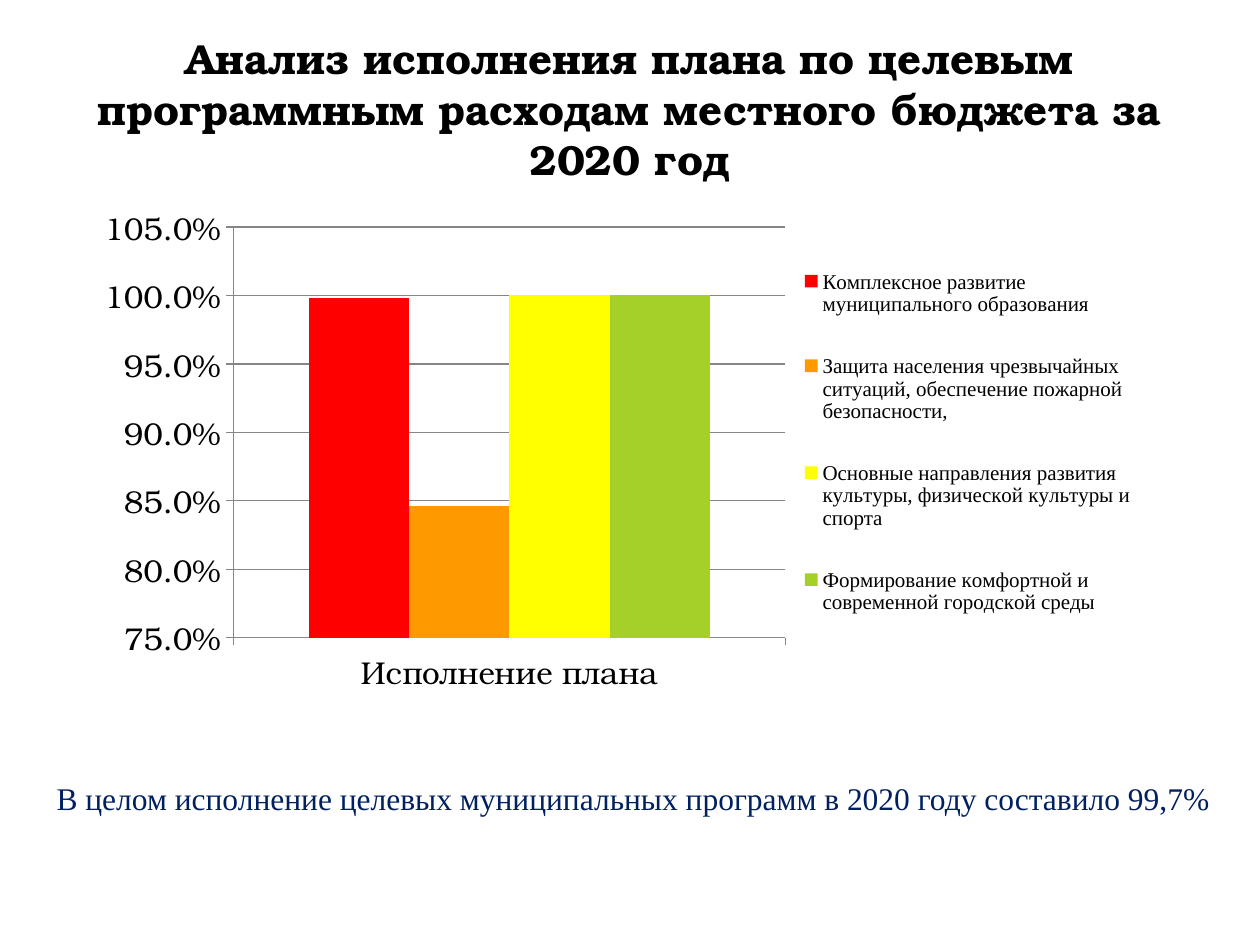
from dataclasses import dataclass

from lxml.etree import SubElement
from pptx import Presentation
from pptx.chart.data import CategoryChartData
from pptx.dml.color import RGBColor
from pptx.enum.chart import XL_CHART_TYPE, XL_LEGEND_POSITION, XL_TICK_MARK
from pptx.enum.text import MSO_ANCHOR, MSO_AUTO_SIZE, PP_ALIGN
from pptx.oxml.ns import qn
from pptx.slide import Slide
from pptx.util import Pt

BLACK = RGBColor(0x00, 0x00, 0x00)
NAVY = RGBColor(0x00, 0x20, 0x60)
GRAY = RGBColor(0x86, 0x86, 0x86)
RED = RGBColor(0xFF, 0x00, 0x00)
ORANGE = RGBColor(0xFF, 0x99, 0x00)
YELLOW = RGBColor(0xFF, 0xFF, 0x00)
GREEN = RGBColor(0xA5, 0xD0, 0x28)

PROGRAMS = [
    ("Комплексное развитие муниципального образования", 0.998, RED),
    ("Защита населения чрезвычайных ситуаций, обеспечение пожарной безопасности,", 0.846, ORANGE),
    ("Основные направления развития культуры, физической культуры и спорта", 1, YELLOW),
    ("Формирование комфортной и современной городской среды", 1, GREEN),
]


def format_font(font, face, size, color=BLACK, bold=False):
    font.name = face
    font.size = Pt(size)
    font.color.rgb = color
    font.bold = bold


def write_text(frame, text, align=PP_ALIGN.LEFT, **style):
    paragraph = frame.paragraphs[0]
    paragraph.alignment = align
    run = paragraph.add_run()
    run.text = text
    format_font(run.font, **style)


def set_layout(element, x, y, width, height, inner=False):
    layout = element.find(qn("c:layout"))
    if layout is None:
        layout = SubElement(element, qn("c:layout"))
        anchor = element.find(qn("c:legendPos"))
        if anchor is None:
            element.insert(0, layout)
        else:
            anchor.addnext(layout)
    manual = SubElement(layout, qn("c:manualLayout"))
    settings = [("layoutTarget", "inner")] if inner else []
    settings += [("xMode", "edge"), ("yMode", "edge"),
                 ("x", x), ("y", y), ("w", width), ("h", height)]
    for tag, value in settings:
        SubElement(manual, qn(f"c:{tag}")).set("val", str(value))


@dataclass
class ReportSlide:
    """Builds the elements of a budget report slide in one shared style."""

    slide: Slide
    heading_face: str = "TeX Gyre Bonum"
    body_face: str = "Times New Roman"

    def title(self, text, *box):
        frame = self.slide.shapes.add_textbox(*map(Pt, box)).text_frame
        frame.word_wrap = True
        frame.auto_size = MSO_AUTO_SIZE.SHAPE_TO_FIT_TEXT
        write_text(frame, text, PP_ALIGN.CENTER, face=self.heading_face, size=24, bold=True)

    def summary(self, text, *box):
        frame = self.slide.shapes.add_textbox(*map(Pt, box)).text_frame
        frame.word_wrap = True
        frame.vertical_anchor = MSO_ANCHOR.MIDDLE
        write_text(frame, text, face=self.body_face, size=18, color=NAVY)

    def column_chart(self, category, programs, *box):
        data = CategoryChartData(number_format="0.0%")
        data.categories = [category]
        for name, share, _ in programs:
            data.add_series(name, [share])
        chart = self.slide.shapes.add_chart(
            XL_CHART_TYPE.COLUMN_CLUSTERED, *map(Pt, box), data).chart
        chart.has_title = False
        format_font(chart.font, self.heading_face, 18)

        columns = chart.plots[0]
        columns.gap_width = 150
        columns.overlap = 0
        columns.vary_by_categories = False
        for series, (_, _, color) in zip(columns.series, programs):
            series.format.fill.solid()
            series.format.fill.fore_color.rgb = color

        shares = chart.value_axis
        shares.minimum_scale, shares.maximum_scale, shares.major_unit = 0.75, 1.05, 0.05
        shares.tick_labels.number_format = "0.0%"
        shares.tick_labels.number_format_is_linked = False
        shares.has_major_gridlines = True
        for axis in (shares, chart.category_axis):
            axis.major_tick_mark = XL_TICK_MARK.OUTSIDE
            axis.format.line.color.rgb = GRAY
        shares.major_gridlines.format.line.color.rgb = GRAY

        chart.has_legend = True
        legend = chart.legend
        legend.position = XL_LEGEND_POSITION.RIGHT
        legend.include_in_layout = False
        format_font(legend.font, self.body_face, 12)
        plot_area = columns._element.getparent()
        set_layout(plot_area, 0.134, 0.043, 0.497, 0.767, inner=True)
        set_layout(legend._element, 0.64, 0.05, 0.31, 0.79)


def main():
    presentation = Presentation()
    presentation.slide_width, presentation.slide_height = Pt(720), Pt(540)
    report = ReportSlide(presentation.slides.add_slide(presentation.slide_layouts[6]))
    report.title("Анализ исполнения плана по целевым программным расходам "
                 "местного бюджета за 2020 год", 25.2, 15.1, 668.9, 65.5)
    report.summary("В целом исполнение целевых муниципальных программ "
                   "в 2020 году составило 99,7%", 25.2, 417.6, 680.4, 77)
    report.column_chart("Исполнение плана", PROGRAMS, 48.2, 116.6, 635, 306)
    presentation.save("out.pptx")


if __name__ == "__main__":
    main()
